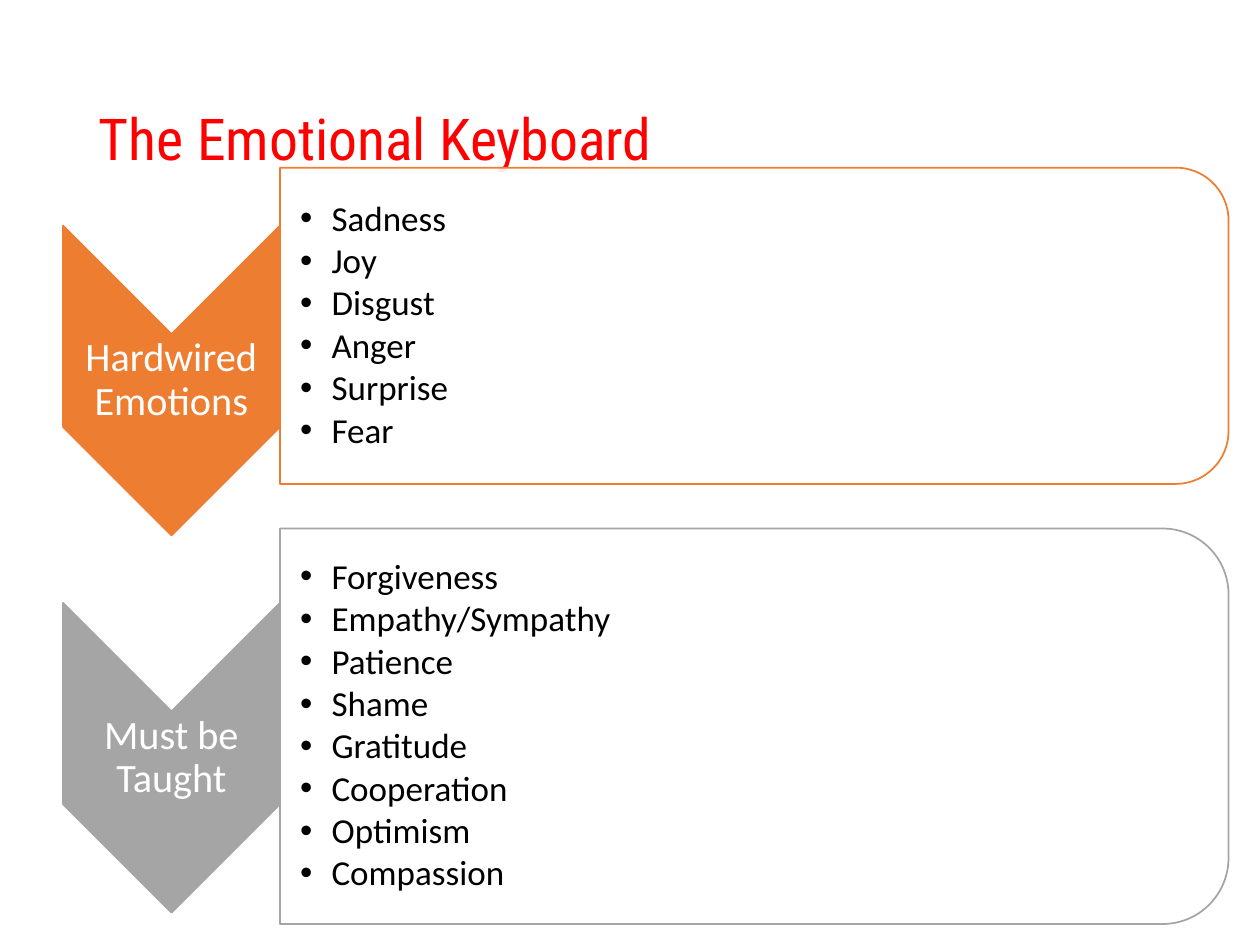
from dataclasses import dataclass

from lxml import etree
from pptx import Presentation
from pptx.dml import color
from pptx.enum import shapes, text
from pptx.oxml import ns
from pptx.util import Pt

COLORS = {
    "title": "FF0000",
    "orange": "ED7D31",
    "gray": "A5A5A5",
    "white": "FFFFFF",
    "black": "000000",
}
CHEVRON_X, CHEVRON_W, CHEVRON_H = 36, 124, 177
LABEL_H = 53
PANEL_X, PANEL_W = CHEVRON_X + CHEVRON_W, 542
PANEL_PAD = 10
INDENT = 18


@dataclass
class Box:
    x: float
    y: float
    w: float
    h: float


@dataclass
class Group:
    label: str
    color: str
    chevron_y: float
    panel_y: float
    panel_h: float
    emotions: list[str]


GROUPS = [
    Group("Hardwired Emotions", "orange", 129, 95.8, 180.7,
          ["Sadness", "Joy", "Disgust", "Anger", "Surprise", "Fear"]),
    Group("Must be Taught", "gray", 344.5, 302, 226,
          ["Forgiveness", "Empathy/Sympathy", "Patience", "Shame",
           "Gratitude", "Cooperation", "Optimism", "Compassion"]),
]


def rgb(name: str) -> color.RGBColor:
    return color.RGBColor.from_string(COLORS[name])


def add_turned_shape(s, kind, box: Box, fill: str, line: str, opacity: int = 100):
    """Draw a shape turned by 90 degrees so that it covers the given box."""
    x = box.x + (box.w - box.h) / 2
    y = box.y + (box.h - box.w) / 2
    sp = s.shapes.add_shape(kind, Pt(x), Pt(y), Pt(box.h), Pt(box.w))
    sp.rotation = 90
    sp.shadow.inherit = False
    sp.fill.solid()
    sp.fill.fore_color.rgb = rgb(fill)
    sp.line.color.rgb = rgb(line)
    sp.line.width = Pt(1)
    if opacity < 100:
        clr = sp._element.spPr.find(ns.qn("a:solidFill"))[0]
        etree.SubElement(clr, ns.qn("a:alpha"), val=str(opacity * 1000))


def add_text(s, box: Box, lines: list[str], size: float, font: str, ink: str,
             margins: tuple[float, float] = (7.2, 3.6), align=text.PP_ALIGN.LEFT,
             space_after: float = 0, bullets: bool = False):
    """Add a middle-anchored text box; margins are the left one and all others."""
    sp = s.shapes.add_textbox(Pt(box.x), Pt(box.y), Pt(box.w), Pt(box.h))
    tf = sp.text_frame
    tf.word_wrap = True
    tf.vertical_anchor = text.MSO_ANCHOR.MIDDLE
    tf.margin_left = Pt(margins[0])
    tf.margin_top = tf.margin_right = tf.margin_bottom = Pt(margins[1])
    tf.text = "\n".join(lines)
    for p in tf.paragraphs:
        p.alignment = align
        p.line_spacing = 0.9
        p.space_after = Pt(space_after)
        if bullets:
            add_bullet(p)
        for r in p.runs:
            r.font.size = Pt(size)
            r.font.name = font
            r.font.color.rgb = rgb(ink)


def add_bullet(p):
    p.level = 1
    pPr = p._p.get_or_add_pPr()
    pPr.set("marL", str(Pt(INDENT)))
    pPr.set("indent", str(-Pt(INDENT)))
    etree.SubElement(pPr, ns.qn("a:buFont"), typeface="Arial")
    etree.SubElement(pPr, ns.qn("a:buChar"), char="•")


def add_group(s, g: Group):
    chevron = Box(CHEVRON_X, g.chevron_y, CHEVRON_W, CHEVRON_H)
    add_turned_shape(s, shapes.MSO_SHAPE.CHEVRON, chevron, g.color, g.color)
    label = Box(CHEVRON_X, g.chevron_y + CHEVRON_W / 2, CHEVRON_W, LABEL_H)
    add_text(s, label, [g.label], 23, "Calibri", "white",
             margins=(1.4, 1.4), align=text.PP_ALIGN.CENTER)
    panel = Box(PANEL_X, g.panel_y, PANEL_W, g.panel_h)
    add_turned_shape(s, shapes.MSO_SHAPE.ROUND_2_SAME_RECTANGLE, panel,
                     "white", g.color, opacity=90)
    body = Box(PANEL_X, g.panel_y + PANEL_PAD,
               PANEL_W - PANEL_PAD, g.panel_h - 2 * PANEL_PAD)
    add_text(s, body, g.emotions, 20, "Calibri", "black",
             margins=(11.5, 0.7), space_after=2.6, bullets=True)


def main():
    prs = Presentation()
    prs.slide_width, prs.slide_height = Pt(720), Pt(540)
    s = prs.slides.add_slide(prs.slide_layouts[6])
    add_text(s, Box(49.5, 28.8, 621, 104.4), ["The Emotional Keyboard"],
             33, "Roboto Condensed", "title")
    for g in GROUPS:
        add_group(s, g)
    prs.save("out.pptx")


if __name__ == "__main__":
    main()
